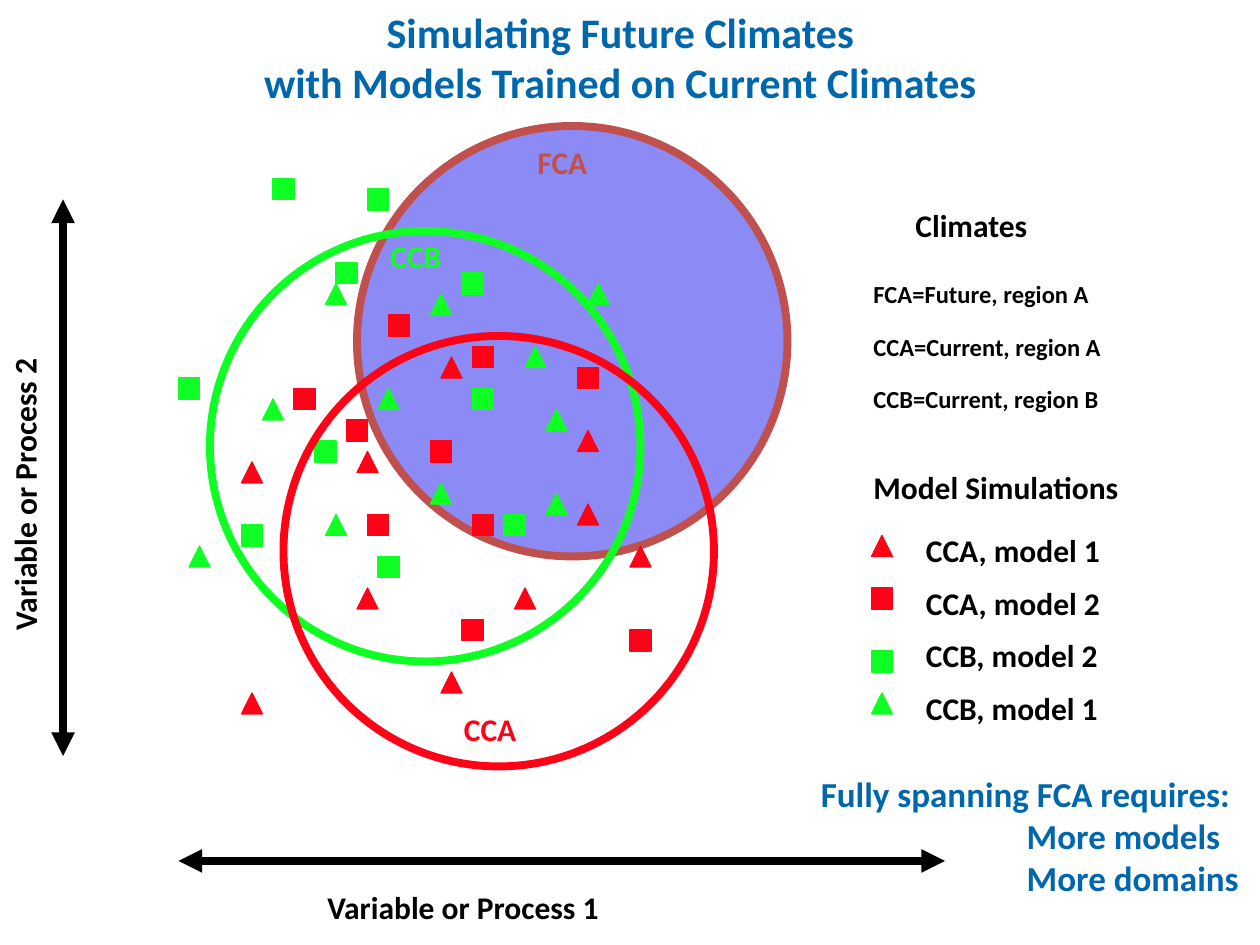
from pptx import Presentation
from pptx.dml.color import RGBColor
from pptx.enum.shapes import MSO_CONNECTOR, MSO_SHAPE
from pptx.enum.text import MSO_ANCHOR, MSO_AUTO_SIZE, PP_ALIGN
from pptx.oxml.ns import qn
from pptx.util import Cm, Pt
from lxml import etree

TRIANGLE = MSO_SHAPE.ISOSCELES_TRIANGLE
SQUARE = MSO_SHAPE.RECTANGLE
CIRCLE = MSO_SHAPE.OVAL
STRAIGHT = MSO_CONNECTOR.STRAIGHT
TOP = MSO_ANCHOR.TOP
GROW = MSO_AUTO_SIZE.SHAPE_TO_FIT_TEXT
NO_FIT = MSO_AUTO_SIZE.NONE
LEFT, CENTER = PP_ALIGN.LEFT, PP_ALIGN.CENTER

THEME = {
    "font": "Calibri",
    "red": RGBColor(0xFF, 0x02, 0x17),
    "green": RGBColor(0x0F, 0xFF, 0x25),
    "brown": RGBColor(0xC0, 0x50, 0x4D),
    "violet": RGBColor(0x8C, 0x8A, 0xF4),
    "blue": RGBColor(0x00, 0x67, 0xAC),
    "black": RGBColor(0, 0, 0),
    "title": Pt(24), "conclusion": Pt(20), "label": Pt(18), "note": Pt(14),
    "thick": Pt(4.5), "thin": Pt(0.75),
}

# Positions are counted in grid steps, twelve to the inch.
TITLE = ["Simulating Future Climates", "with Models Trained on Current Climates"]
CONCLUSION = ["Fully spanning FCA requires:", "More models", "More domains"]
CIRCLE_SIZE, MARKER_SIZE = 41, 2
BACK_CIRCLES = [(34, 12, "brown", "violet"), (20, 22, "green", None)]
FRONT_CIRCLE = (27, 32, "red", None)
CIRCLE_LABELS = [("FCA", 50, 13, "brown"), ("CCB", 36, 22, "green"), ("CCA", 43, 67, "red")]
SIMULATIONS = [
    {"name": "CCA, model 1", "shape": TRIANGLE, "color": "red", "key_top": 51,
     "points": [(55, 48), (60, 52), (34, 56), (55, 41), (34, 43),
                (42, 34), (49, 56), (42, 64), (23, 66), (23, 44)]},
    {"name": "CCA, model 2", "shape": SQUARE, "color": "red", "key_top": 56,
     "points": [(45, 49), (60, 60), (44, 59), (45, 33), (28, 37),
                (37, 30), (35, 49), (41, 42), (33, 40), (55, 35)]},
    {"name": "CCB, model 2", "shape": SQUARE, "color": "green", "key_top": 62,
     "points": [(17, 36), (48, 49), (45, 37), (44, 26), (36, 53),
                (30, 42), (23, 50), (26, 17), (35, 18), (32, 25)]},
    {"name": "CCB, model 1", "shape": TRIANGLE, "color": "green", "key_top": 66,
     "points": [(52, 47), (41, 28), (36, 37), (31, 27), (31, 49), (52, 39),
                (25, 38), (18, 52), (41, 46), (50, 33), (56, 27)]},
]
HEADINGS = [("Climates", 86, 19, 15), ("Model Simulations", 82, 44, 29)]
CLIMATES = ["FCA=Future, region A", "CCA=Current, region A", "CCB=Current, region B"]
CLIMATE_LEFT, CLIMATE_TOP = 82, 26
KEY_LEFT, KEY_LABEL_LEFT, KEY_LABEL_TOP = 83, 87, 50
ROW = 5
AXES = [(6, 19, 6, 72), (17, 82, 90, 82)]
AXIS_LABELS = [("Variable or Process 1", 30, 84, 0), ("Variable or Process 2", -18.6, 36.7, 269.9)]


def grid(steps):
    return Cm(steps * 2.54 / 12)


def apply(target, formats):
    for name, value in formats.items():
        setattr(target, name, value)


def write(shape, lines, size, color, wrap=False, align=LEFT, fit=GROW, indent=None):
    frame = shape.text_frame
    apply(frame, {"word_wrap": wrap, "auto_size": fit, "vertical_anchor": TOP})
    for index, line in enumerate(lines):
        paragraph = frame.paragraphs[0] if index == 0 else frame.add_paragraph()
        paragraph.alignment = align
        if indent and index:
            paragraph._p.get_or_add_pPr().set("marL", str(indent))
        run = paragraph.add_run()
        run.text = line
        apply(run.font, {"name": THEME["font"], "size": THEME[size], "bold": True})
        run.font.color.rgb = THEME[color]


def add_text(slide, lines, left, top, width, height, size="label", color="black", **options):
    box = slide.shapes.add_textbox(*map(grid, (left, top, width, height)))
    write(box, lines, size, color, **options)
    return box


def add_figure(slide, kind, left, top, size, line, fill, weight):
    shape = slide.shapes.add_shape(kind, *map(grid, (left, top, size, size)))
    shape.shadow.inherit = False
    shape.line.color.rgb = THEME[line]
    shape.line.width = THEME[weight]
    if fill:
        shape.fill.solid()
        shape.fill.fore_color.rgb = THEME[fill]
    else:
        shape.fill.background()


def add_circle(slide, left, top, line, fill):
    add_figure(slide, CIRCLE, left, top, CIRCLE_SIZE, line, fill, "thick")


def add_marker(slide, simulation, left, top):
    color = simulation["color"]
    add_figure(slide, simulation["shape"], left, top, MARKER_SIZE, color, color, "thin")


def add_axis(slide, ends):
    axis = slide.shapes.add_connector(STRAIGHT, *map(grid, ends))
    axis.line.color.rgb = THEME["black"]
    axis.line.width = THEME["thick"]
    outline = axis.line._get_or_add_ln()
    for end in ("a:headEnd", "a:tailEnd"):
        etree.SubElement(outline, qn(end), type="triangle")
    etree.SubElement(axis._element.spPr, qn("a:effectLst"))


def main():
    presentation = Presentation()
    apply(presentation, {"slide_width": Cm(25.4), "slide_height": Cm(19.05)})
    slide = presentation.slides.add_slide(presentation.slide_layouts[5])

    title = slide.shapes.title
    apply(title, {"left": Cm(4.95), "top": Cm(0), "width": Cm(15.11), "height": Cm(2.31)})
    write(title, TITLE, "title", "blue", align=CENTER, fit=NO_FIT)

    for circle in BACK_CIRCLES:
        add_circle(slide, *circle)
    for text, left, top, color in CIRCLE_LABELS:
        add_text(slide, [text], left, top, 9, 4.8, color=color)

    for ends in AXES:
        add_axis(slide, ends)
    for text, left, top, rotation in AXIS_LABELS:
        add_text(slide, [text], left, top, 43, 6).rotation = rotation

    for text, left, top, width in HEADINGS:
        add_text(slide, [text], left, top, width, 4.8)
    for row, text in enumerate(CLIMATES):
        add_text(slide, [text], CLIMATE_LEFT, CLIMATE_TOP + row * ROW, 28, 4, size="note")

    for row, simulation in enumerate(SIMULATIONS):
        for left, top in simulation["points"]:
            add_marker(slide, simulation, left, top)
        add_marker(slide, simulation, KEY_LEFT, simulation["key_top"])
        add_text(slide, [simulation["name"]], KEY_LABEL_LEFT, KEY_LABEL_TOP + row * ROW, 22, 4.8)

    add_circle(slide, *FRONT_CIRCLE)
    add_text(slide, CONCLUSION, 77, 73, 43, 13.2, size="conclusion", color="blue",
             wrap=True, indent=Cm(4.15))
    presentation.save("out.pptx")


if __name__ == "__main__":
    main()
